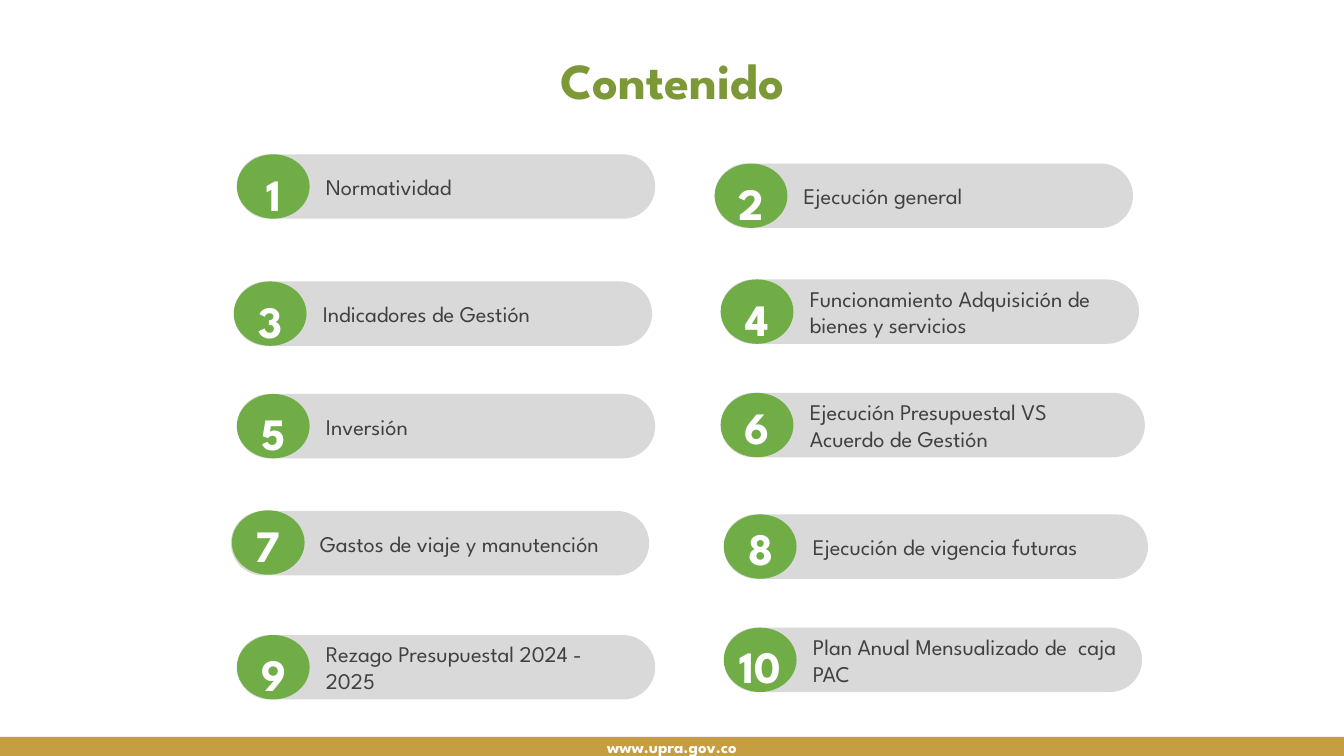
import pptx
import pptx.dml.color
import pptx.enum.shapes
import pptx.enum.text
import pptx.util

Pt = pptx.util.Pt
Kind = pptx.enum.shapes.MSO_SHAPE
Align = pptx.enum.text.PP_ALIGN
Anchor = pptx.enum.text.MSO_ANCHOR
Fit = pptx.enum.text.MSO_AUTO_SIZE


def color(code):
    return pptx.dml.color.RGBColor.from_string(code)


class Deck:
    """Holds the style and the current slide."""

    face = "League Spartan"
    olive, green, gray = "7D9837", "70AD47", "D9D9D9"
    gold, dark, white = "C59E41", "404040", "FFFFFF"
    high = 46

    def __init__(self):
        self.show = pptx.Presentation()
        self.show.slide_width, self.show.slide_height = Pt(960), Pt(540)
        self.slide = self.show.slides.add_slide(self.show.slide_layouts[5])

    def label(self, shape, text, size, ink, bold=True, align=Align.CENTER,
              anchor=Anchor.MIDDLE):
        frame = shape.text_frame
        frame.word_wrap = True
        frame.vertical_anchor = anchor
        para = frame.paragraphs[0]
        para.text = text
        para.alignment = align
        font = para.font
        font.name, font.size, font.bold = self.face, Pt(size), bold
        font.color.rgb = color(ink)
        return frame

    def title(self, text):
        box = self.slide.shapes.title
        box.left, box.top, box.width, box.height = map(Pt, (151.2, 36.7, 658, 85.7))
        frame = self.label(box, text, 36, self.olive, anchor=Anchor.TOP)
        frame.auto_size = Fit.NONE
        frame.paragraphs[0].line_spacing = 0.9

    def shape(self, home, kind, area, fill):
        item = home.shapes.add_shape(kind, *map(Pt, area))
        item.shadow.inherit = False
        item.fill.solid()
        item.fill.fore_color.rgb = color(fill)
        item.line.fill.background()
        return item

    def entry(self, num, text, x, y, wide, drop, dx=0, dy=0):
        group = self.slide.shapes.add_group_shape()
        bar = self.shape(group, Kind.ROUNDED_RECTANGLE, (x, y, wide, self.high), self.gray)
        bar.adjustments[0] = 0.5
        frame = self.label(bar, text, 16, self.dark, False, Align.LEFT)
        frame.margin_left = Pt(56.9)
        self.shape(group, Kind.OVAL, (x + dx, y + dy, 52, self.high), self.green)
        box = group.shapes.add_textbox(*map(Pt, (x - 4.3, y + drop, 61.2, self.high)))
        frame = self.label(box, str(num), 32, self.white, anchor=Anchor.TOP)
        frame.auto_size = Fit.SHAPE_TO_FIT_TEXT

    def footer(self, text):
        bar = self.shape(self.slide, Kind.RECTANGLE, (0, 526.3, 960, 13.7), self.gold)
        self.label(bar, text, 12, self.white)


def main():
    deck = Deck()
    deck.footer("www.upra.gov.co")
    deck.title("Contenido")
    items = [
        ("Normatividad", 169.2, 110.2, 298.8, 5),
        ("Ejecución general", 510.5, 116.8, 298.8, 5),
        ("Indicadores de Gestión", 167, 201, 298.8, 5),
        ("Funcionamiento Adquisición de bienes y servicios", 514.8, 199.6, 298.8, 5),
        ("Inversión", 169.2, 281.4, 298.8, 5),
        ("Ejecución Presupuestal VS Acuerdo de Gestión", 514.8, 280.6, 303, 1.5),
        ("Gastos de viaje y manutención", 164.9, 365, 298.8, 1.5, 0.7, -0.5),
        ("Ejecución de vigencia futuras", 517, 367.4, 303, 0.7),
        ("Rezago Presupuestal 2024 - 2025", 169.2, 453.6, 298.8, 5),
        ("Plan Anual Mensualizado de  caja PAC", 517, 448.3, 298.8, 4.5),
    ]
    for num, item in enumerate(items, 1):
        deck.entry(num, *item)
    deck.show.save("out.pptx")


if __name__ == "__main__":
    main()
